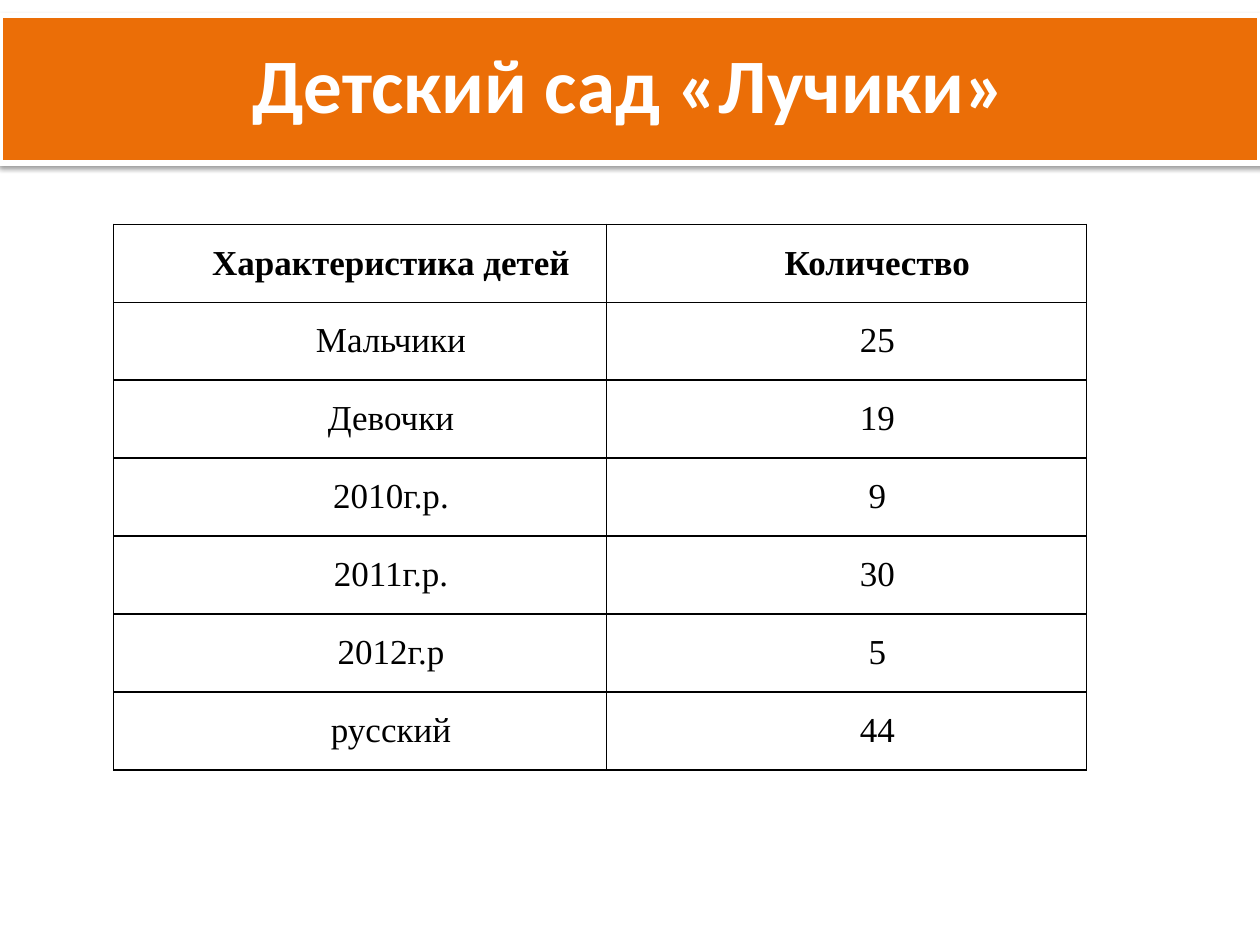
"""Build a slide with a kindergarten title banner and a table of children counts."""
import lxml.etree
import pptx
import pptx.dml.color
import pptx.enum.shapes
import pptx.enum.text
import pptx.oxml.ns
import pptx.util

Pt = pptx.util.Pt
qn = pptx.oxml.ns.qn
ORANGE = pptx.dml.color.RGBColor(0xEB, 0x6E, 0x07)
WHITE = pptx.dml.color.RGBColor(0xFF, 0xFF, 0xFF)
BLACK = pptx.dml.color.RGBColor(0x00, 0x00, 0x00)

TITLE = "Детский сад «Лучики»"
ROWS = [
    ("Характеристика детей", "Количество"),
    ("Мальчики", "25"),
    ("Девочки", "19"),
    ("2010г.р.", "9"),
    ("2011г.р.", "30"),
    ("2012г.р", "5"),
    ("русский", "44"),
]
COLUMN_WIDTHS = (281.5, 274.3)
ROW_HEIGHT = 44.55


def add_element(parent, tag, **attributes):
    return lxml.etree.SubElement(parent, qn(tag), {name: str(value) for name, value in attributes.items()})


def add_run(paragraph, text, font_name, size, color, bold):
    paragraph.alignment = pptx.enum.text.PP_ALIGN.CENTER
    run = paragraph.add_run()
    run.text = text
    run.font.name = font_name
    run.font.size = Pt(size)
    run.font.color.rgb = color
    run.font.bold = bold


def add_banner(slide):
    banner = slide.shapes.add_shape(
        pptx.enum.shapes.MSO_SHAPE.RECTANGLE, Pt(0), Pt(8.8), Pt(720), Pt(84.4)
    )
    banner.fill.solid()
    banner.fill.fore_color.rgb = ORANGE
    banner.line.color.rgb = WHITE
    banner.line.width = Pt(3)
    banner.shadow.inherit = False
    effects = banner._element.spPr.find(qn("a:effectLst"))
    shadow = add_element(
        effects, "a:outerShdw", blurRad=Pt(3.1), dist=Pt(1.6), dir=5400000, rotWithShape=0
    )
    color = add_element(shadow, "a:srgbClr", val=BLACK)
    add_element(color, "a:alpha", val=38000)


def add_title(slide, text):
    title = slide.shapes.add_textbox(Pt(0), Pt(4.3), Pt(720), Pt(86.4))
    frame = title.text_frame
    frame.word_wrap = True
    frame.vertical_anchor = pptx.enum.text.MSO_ANCHOR.MIDDLE
    add_run(frame.paragraphs[0], text, "Calibri", 44, WHITE, True)


def add_borders(cell):
    properties = cell._tc.get_or_add_tcPr()
    for side in ("a:lnL", "a:lnR", "a:lnT", "a:lnB"):
        line = add_element(properties, side, w=Pt(1))
        fill = add_element(line, "a:solidFill")
        add_element(fill, "a:srgbClr", val=BLACK)


def fill_cell(cell, text, bold):
    add_borders(cell)
    cell.fill.solid()
    cell.fill.fore_color.rgb = WHITE
    cell.margin_left = cell.margin_right = Pt(5)
    cell.margin_top = cell.margin_bottom = Pt(0)
    paragraph = cell.text_frame.paragraphs[0]
    paragraph.line_spacing = 1.5
    paragraph._p.get_or_add_pPr().set("indent", str(Pt(35.4)))
    add_run(paragraph, text, "Times New Roman", 20, BLACK, bold)


def add_children_table(slide, rows):
    frame = slide.shapes.add_table(
        len(rows), len(COLUMN_WIDTHS), Pt(65), Pt(128.2),
        Pt(sum(COLUMN_WIDTHS)), Pt(ROW_HEIGHT * len(rows)),
    )
    table = frame.table
    for column, width in zip(table.columns, COLUMN_WIDTHS):
        column.width = Pt(width)
    for row_index, texts in enumerate(rows):
        table.rows[row_index].height = Pt(ROW_HEIGHT)
        for column_index, text in enumerate(texts):
            fill_cell(table.cell(row_index, column_index), text, row_index == 0)


def main():
    presentation = pptx.Presentation()
    presentation.slide_width = Pt(720)
    presentation.slide_height = Pt(540)
    slide = presentation.slides.add_slide(presentation.slide_layouts[6])
    add_banner(slide)
    add_title(slide, TITLE)
    add_children_table(slide, ROWS)
    presentation.save("out.pptx")


if __name__ == "__main__":
    main()
